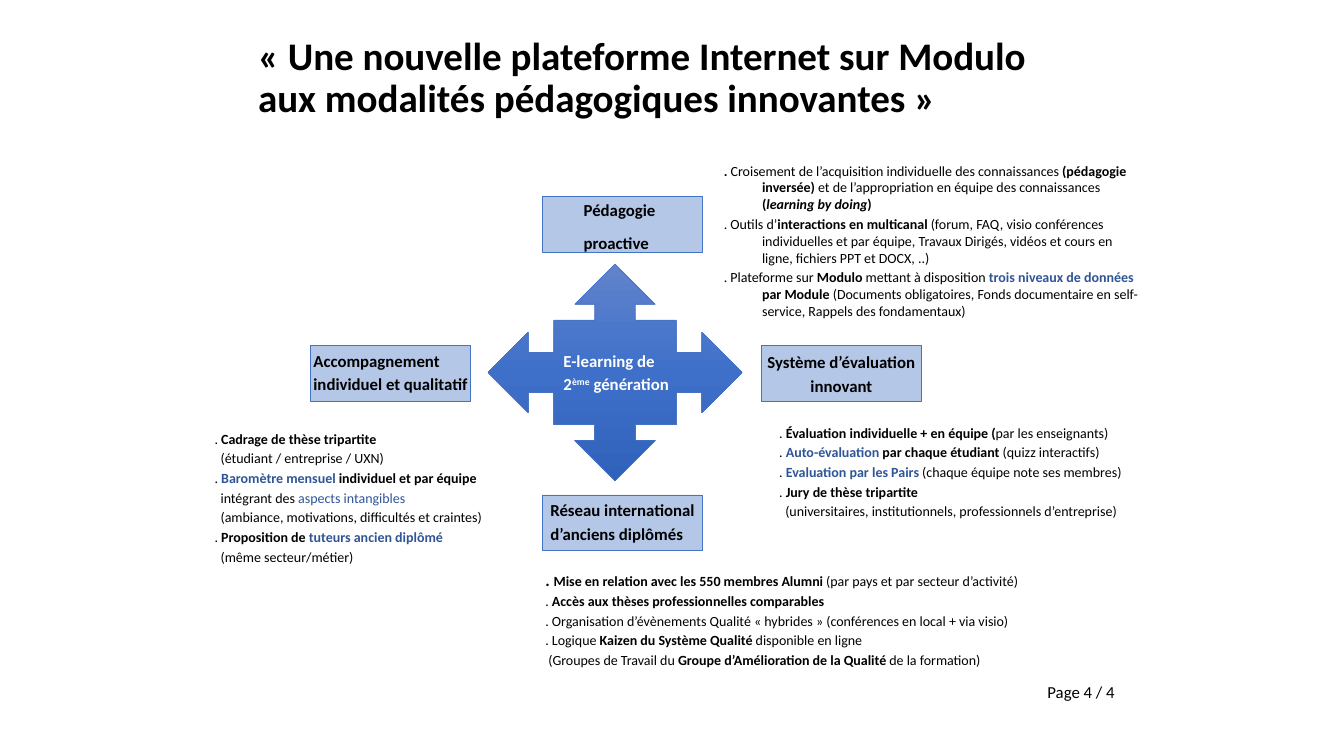
from copy import deepcopy
from dataclasses import dataclass

from pptx import Presentation
from pptx.dml.color import RGBColor
from pptx.enum import shapes, text
from pptx.oxml.ns import qn
from pptx.util import Inches, Pt

FONT = "Calibri"
BLACK, WHITE = "000000", "FFFFFF"
ACCENT, EDGE, PALE = "2F5597", "4472C4", "B4C7E7"
GRADIENT = ["6183CB", "3E70CA", "3062BB"]
HANG = 0.38
LABEL_WIDTH, LABEL_HEIGHT = 1.59, 0.55
TEXT_HEIGHT = 0.37
LEFT, CENTER = text.PP_ALIGN.LEFT, text.PP_ALIGN.CENTER
JUSTIFY = text.PP_ALIGN.JUSTIFY


@dataclass
class Span:
    words: str
    bold: bool = False
    italic: bool = False
    accent: bool = False
    raised: bool = False
    size: float | None = None


@dataclass
class Line:
    spans: list[Span]
    align: text.PP_ALIGN = LEFT
    offset: float = 0


@dataclass
class Label:
    left: float
    top: float
    text_left: float
    text_top: float
    lines: list[str]
    align: text.PP_ALIGN = LEFT
    hang: float = HANG
    before: float = 2.4
    spacing: float | None = None


@dataclass
class Notes:
    left: float
    top: float
    width: float
    lines: list[Line]


def rgb(value: str) -> RGBColor:
    return RGBColor.from_string(value)


def bold(words: str) -> Span:
    return Span(words, bold=True)


def blue(words: str, heavy: bool = True) -> Span:
    return Span(words, bold=heavy, accent=True)


def line(*parts: str | Span, align=LEFT, offset: float = 0) -> Line:
    spans = [Span(part) if isinstance(part, str) else part for part in parts]
    return Line(spans, align, offset)


def write(frame, lines: list[Line], *, size: float, color: str = BLACK, hang: float = 0,
          before: float = 0, spacing: float | None = None) -> None:
    frame.word_wrap = True
    frame.auto_size = text.MSO_AUTO_SIZE.NONE
    for index, item in enumerate(lines):
        para = frame.add_paragraph() if index else frame.paragraphs[0]
        para.alignment = item.align
        para.space_before = Pt(before)
        para.line_spacing = spacing
        properties = para._p.get_or_add_pPr()
        properties.set("marL", str(Inches(hang)))
        properties.set("indent", str(Inches(item.offset - hang)))
        for span in item.spans:
            if span.words == "\n":
                para.add_line_break()
                continue
            run = para.add_run()
            run.text = span.words
            run.font.name = FONT
            run.font.size = Pt(span.size or size)
            run.font.bold = span.bold
            run.font.italic = span.italic
            run.font.color.rgb = rgb(ACCENT if span.accent else color)
            if span.raised:
                run._r.get_or_add_rPr().set("baseline", "30000")


def add_text(page, left: float, top: float, width: float, lines: list[Line],
             height: float = TEXT_HEIGHT, **style) -> None:
    box = page.shapes.add_textbox(Inches(left), Inches(top), Inches(width), Inches(height))
    write(box.text_frame, lines, **style)


def add_block(page, kind, left: float, top: float, width: float, height: float):
    block = page.shapes.add_shape(kind, Inches(left), Inches(top), Inches(width), Inches(height))
    block.shadow.inherit = False
    block.line.color.rgb = rgb(EDGE)
    block.line.width = Pt(0.5)
    return block


def add_label(page, label: Label) -> None:
    block = add_block(page, shapes.MSO_SHAPE.RECTANGLE, label.left, label.top,
                      LABEL_WIDTH, LABEL_HEIGHT)
    block.fill.solid()
    block.fill.fore_color.rgb = rgb(PALE)
    add_text(page, label.text_left, label.text_top, 1.75,
             [line(bold(words), align=label.align) for words in label.lines],
             size=12, hang=label.hang, before=label.before, spacing=label.spacing)


def add_core(page) -> None:
    core = add_block(page, shapes.MSO_SHAPE.QUAD_ARROW_CALLOUT, 4.84, 2.62, 2.52, 2.15)
    core.fill.gradient()
    core.fill.gradient_angle = 270
    first = next(core._element.spPr.iter(qn("a:gs")))
    first.addnext(deepcopy(first))
    for stop, position, color in zip(core.fill.gradient_stops, (0, 0.5, 1), GRADIENT):
        stop.position = position
        stop.color.rgb = rgb(color)
    add_text(page, 5.49, 3.43, 1.48,
             [line(bold("E-learning de")),
              line(bold("2"), Span("ème", bold=True, raised=True), bold(" génération"))],
             size=12, color=WHITE, hang=HANG, before=2.4)


def add_title(page) -> None:
    title = page.shapes.title
    title.left, title.top = Inches(2.46), Inches(0.49)
    title.width, title.height = Inches(9), Inches(1.01)
    frame = title.text_frame
    frame.vertical_anchor = text.MSO_ANCHOR.MIDDLE
    frame.margin_bottom = Inches(0.47)
    write(frame, [line(bold("« Une nouvelle plateforme Internet sur Modulo"), "\n",
                       bold("aux modalités pédagogiques innovantes »"))],
          size=27.9, spacing=0.9)


LABELS = [
    Label(5.38, 1.95, 5.69, 1.96, ["Pédagogie", "proactive"],
          hang=0.25, before=10, spacing=0.9),
    Label(7.55, 3.43, 7.47, 3.44, ["Système d’évaluation", "innovant"], CENTER),
    Label(3.08, 3.43, 3.01, 3.43, ["Accompagnement", "individuel et qualitatif"]),
    Label(5.38, 4.91, 5.36, 4.91, ["Réseau international", "d’anciens diplômés"]),
]

NOTES = [
    Notes(2.03, 4.22, 3.47, [
        line(". ", bold("Cadrage de thèse tripartite"), align=JUSTIFY),
        line("(étudiant / entreprise / UXN)", align=JUSTIFY, offset=0.06),
        line(". ", blue("Baromètre mensuel "), bold("individuel et par équipe")),
        line("intégrant des ", blue("aspects intangibles", heavy=False), offset=0.06),
        line("(ambiance, motivations, difficultés et craintes)", offset=0.06),
        line(". ", bold("Proposition de "), blue("tuteurs ancien diplômé")),
        line("(même secteur/métier)", offset=0.06),
    ]),
    Notes(7.63, 4.16, 3.88, [
        line(". ", bold("Évaluation individuelle + en équipe ("), "par les enseignants)"),
        line(". ", blue("Auto-évaluation"), bold(" par chaque étudiant"),
             " (quizz interactifs)"),
        line(". ", blue("Evaluation par les Pairs "), "(chaque équipe note ses membres)"),
        line(". ", bold("Jury de thèse tripartite")),
        line("(universitaires, institutionnels, professionnels d’entreprise)", offset=0.06),
    ]),
    Notes(5.31, 5.6, 5.29, [
        line(Span(". ", bold=True, size=12),
             bold("Mise en relation avec les 550 membres Alumni "),
             "(par pays et par secteur d’activité)"),
        line(". ", bold("Accès aux thèses professionnelles comparables")),
        line(". Organisation d’évènements Qualité « hybrides » (conférences en local + via visio)"),
        line(". Logique ", bold("Kaizen du Système Qualité "), "disponible en ligne"),
        line("(Groupes de Travail du ", bold("Groupe d’Amélioration de la Qualité"),
             " de la formation)", offset=0.03),
    ]),
    Notes(7.08, 1.56, 4.38, [
        line(bold(". "), "Croisement de l’acquisition individuelle des connaissances ",
             bold("(pédagogie inversée) "),
             "et de l’appropriation en équipe des connaissances ", bold("("),
             Span("learning by doing", bold=True, italic=True), bold(")")),
        line(". Outils d’", bold("interactions en multicanal "),
             "(forum, FAQ, visio conférences individuelles et par équipe, Travaux Dirigés, "
             "vidéos et cours en ligne, fichiers PPT et DOCX, ..)"),
        line(". Plateforme sur ", bold("Modulo"), " mettant à disposition ",
             blue("trois niveaux de données "), bold("par Module "),
             "(Documents obligatoires, Fonds documentaire en self-service, "
             "Rappels des fondamentaux)"),
    ]),
]


def main() -> None:
    deck = Presentation()
    deck.slide_width, deck.slide_height = Inches(13.33), Inches(7.5)
    page = deck.slides.add_slide(deck.slide_layouts.get_by_name("Title Only"))
    add_title(page)
    add_core(page)
    for label in LABELS:
        add_label(page, label)
    for notes in NOTES:
        add_text(page, notes.left, notes.top, notes.width, notes.lines,
                 size=10, hang=HANG, before=2)
    add_text(page, 10.29, 6.71, 1.25, [line("Page 4 / 4")], height=0.3, size=12)
    deck.save("out.pptx")


if __name__ == "__main__":
    main()
